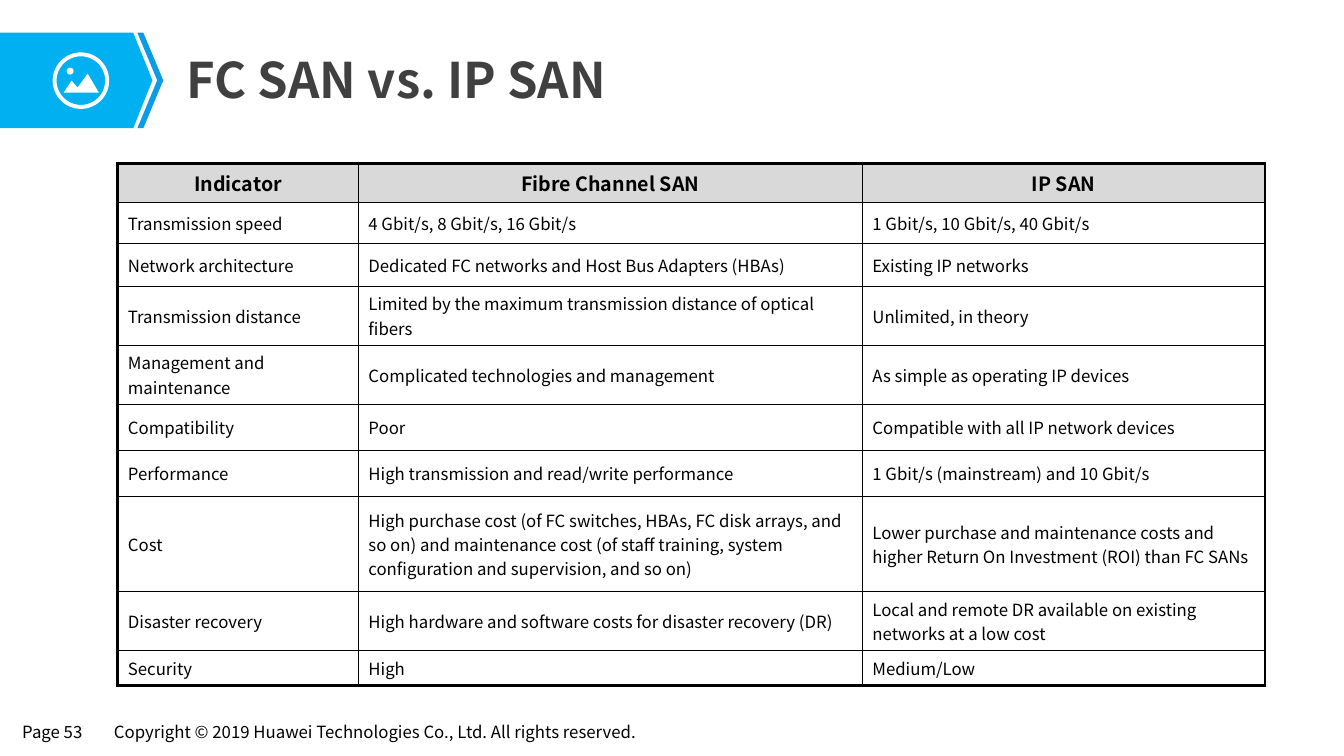
from dataclasses import dataclass

from lxml import etree
from pptx import Presentation
from pptx.dml.color import RGBColor
from pptx.enum.shapes import MSO_SHAPE as SHAPE
from pptx.enum.text import MSO_ANCHOR as ANCHOR, PP_ALIGN as ALIGN
from pptx.oxml.ns import qn
from pptx.util import Pt


@dataclass(frozen=True)
class Theme:
    font: str = "Noto Sans CJK SC"
    black: str = "000000"
    white: str = "FFFFFF"
    title: str = "404040"
    banner: str = "00B0F0"
    chevron: str = "0B9CE5"
    header: str = "D9D9D9"
    title_size: int = 35
    header_size: int = 14
    body_size: int = 12
    outer_line: float = 2.25
    inner_line: float = 1


theme = Theme()


def write(frame, text, size, color=theme.black, bold=False):
    """Fill a text frame with one line of text, vertically centred."""
    frame.text = text
    frame.word_wrap = True
    frame.vertical_anchor = ANCHOR.MIDDLE
    font = frame.paragraphs[0].runs[0].font
    font.name, font.size, font.bold = theme.font, Pt(size), bold
    font.color.rgb = RGBColor.from_string(color)


def paint(shape, color):
    shape.shadow.inherit = False
    shape.fill.solid()
    shape.fill.fore_color.rgb = RGBColor.from_string(color)
    shape.line.fill.background()


deck = Presentation()
deck.slide_width, deck.slide_height = Pt(960), Pt(540)
slide = deck.slides.add_slide(deck.slide_layouts[6])
shapes = slide.shapes

# Banner with picture icon
outlines = [
    (theme.banner, [(0, 23.4), (95.2, 23.4), (108.9, 57.4), (95.2, 91.6), (0, 91.6)]),
    (theme.chevron, [(102.4, 23.4), (98.1, 23.4), (112.3, 57.4), (98.1, 91.6),
                     (102.4, 91.6), (116.6, 57.4)]),
    (theme.white, [(70.6, 66.2), (45.4, 66.2), (51.1, 57.6), (55.4, 62.6), (62.6, 52.6)]),
]
for color, points in outlines:
    corners = [(Pt(x), Pt(y)) for x, y in points]
    builder = shapes.build_freeform(*corners[0], scale=1)
    builder.add_line_segments(corners[1:], close=True)
    paint(builder.convert_to_shape(), color)

ring = shapes.add_shape(SHAPE.DONUT, Pt(37.6), Pt(37.4), Pt(40.4), Pt(40.4))
ring.adjustments[0] = 0.07
sun = shapes.add_shape(SHAPE.OVAL, Pt(47.6), Pt(48.3), Pt(5), Pt(5))
for part in (ring, sun):
    paint(part, theme.white)

# Title and footer
lines = [
    ("FC SAN vs. IP SAN", 125.3, 31, 774, 50.4, 8, theme.title_size, theme.title, True),
    ("Page 53", 9.4, 512, 60.5, 21, 6.5, theme.body_size, theme.black, False),
    ("Copyright © 2019 Huawei Technologies Co., Ltd. All rights reserved.",
     74.9, 512, 407.5, 21, 6.5, theme.body_size, theme.black, False),
]
for text, left, top, width, height, inset, size, color, bold in lines:
    frame = shapes.add_textbox(Pt(left), Pt(top), Pt(width), Pt(height)).text_frame
    frame.margin_left = frame.margin_right = Pt(inset)
    frame.margin_top = frame.margin_bottom = 0
    write(frame, text, size, color, bold)

# Comparison table
comparison = [
    ("Indicator", "Fibre Channel SAN", "IP SAN"),
    ("Transmission speed", "4 Gbit/s, 8 Gbit/s, 16 Gbit/s", "1 Gbit/s, 10 Gbit/s, 40 Gbit/s"),
    ("Network architecture", "Dedicated FC networks and Host Bus Adapters (HBAs)",
     "Existing IP networks"),
    ("Transmission distance", "Limited by the maximum transmission distance of optical fibers",
     "Unlimited, in theory"),
    ("Management and maintenance", "Complicated technologies and management",
     "As simple as operating IP devices"),
    ("Compatibility", "Poor", "Compatible with all IP network devices"),
    ("Performance", "High transmission and read/write performance",
     "1 Gbit/s (mainstream) and 10 Gbit/s"),
    ("Cost",
     "High purchase cost (of FC switches, HBAs, FC disk arrays, and so on) and maintenance "
     "cost (of staff training, system configuration and supervision, and so on)",
     "Lower purchase and maintenance costs and higher Return On Investment (ROI) than FC SANs"),
    ("Disaster recovery", "High hardware and software costs for disaster recovery (DR)",
     "Local and remote DR available on existing networks at a low cost"),
    ("Security", "High", "Medium/Low"),
]
widths = [171.8, 360, 287.6]
heights = [28.2, 29.2, 30.6, 42.1, 42.1, 33, 33, 68, 42.1, 25]
table = shapes.add_table(len(heights), len(widths), Pt(84.2), Pt(116.6),
                         Pt(sum(widths)), Pt(sum(heights))).table
table.first_row = table.horz_banding = False
for column, width in zip(table.columns, widths):
    column.width = Pt(width)
for row, height in zip(table.rows, heights):
    row.height = Pt(height)

last_row, last_col = len(heights) - 1, len(widths) - 1
for r, entries in enumerate(comparison):
    for c, entry in enumerate(entries):
        cell = table.cell(r, c)
        is_header = r == 0
        write(cell.text_frame, entry,
              theme.header_size if is_header else theme.body_size, bold=is_header)
        cell.vertical_anchor = ANCHOR.MIDDLE
        cell.margin_left = cell.margin_right = Pt(7.2)
        cell.margin_top = cell.margin_bottom = Pt(3.6)
        if is_header:
            cell.text_frame.paragraphs[0].alignment = ALIGN.CENTER
            cell.fill.solid()
            cell.fill.fore_color.rgb = RGBColor.from_string(theme.header)
        else:
            cell.fill.background()

        properties = cell._tc.get_or_add_tcPr()
        on_edge = {"L": c == 0, "R": c == last_col, "T": r == 0, "B": r == last_row}
        for position, (side, outer) in enumerate(on_edge.items()):
            border = etree.Element(qn(f"a:ln{side}"))
            border.set("w", str(Pt(theme.outer_line if outer else theme.inner_line)))
            fill = etree.SubElement(border, qn("a:solidFill"))
            etree.SubElement(fill, qn("a:srgbClr")).set("val", theme.black)
            properties.insert(position, border)

deck.save("out.pptx")
